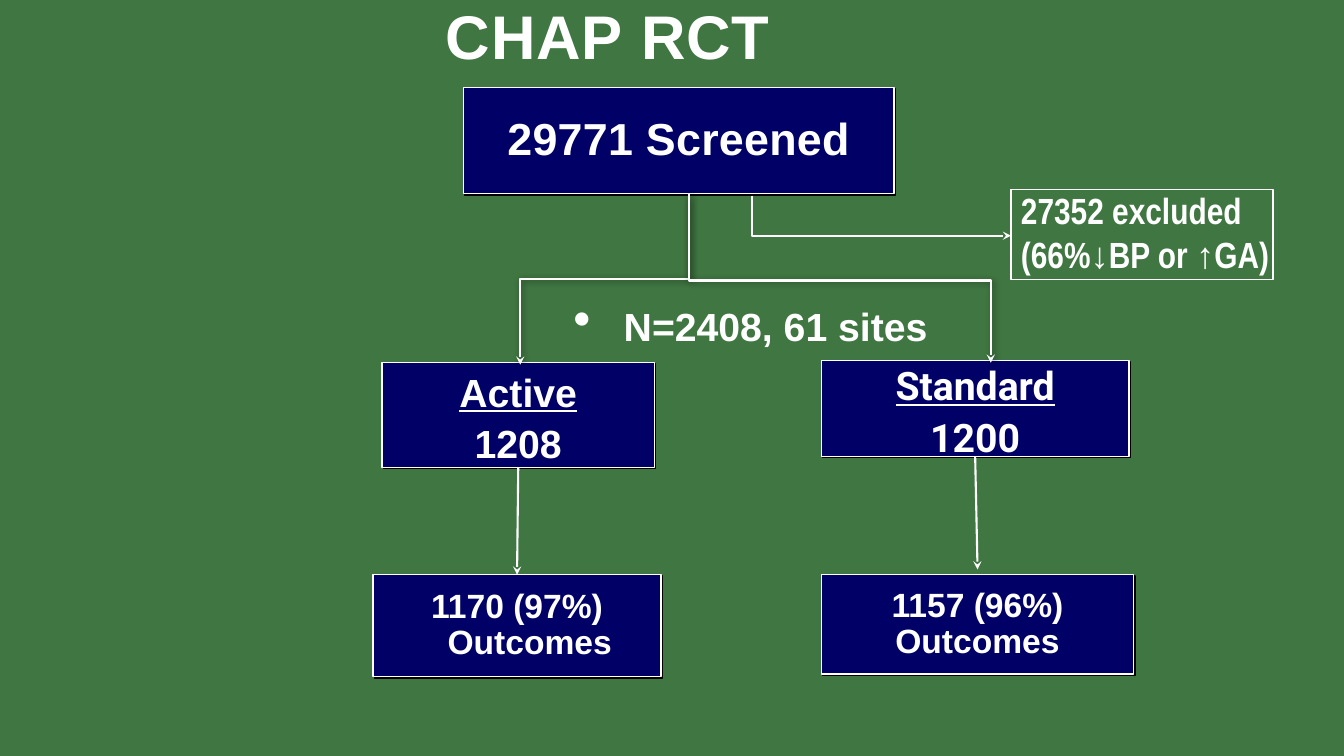
from lxml.etree import SubElement
from pptx import Presentation
from pptx.dml.color import RGBColor
from pptx.enum.dml import MSO_LINE
from pptx.enum.shapes import MSO_CONNECTOR, MSO_SHAPE
from pptx.enum.text import MSO_ANCHOR, PP_ALIGN
from pptx.oxml.ns import qn
from pptx.util import Cm, Pt

GREEN = RGBColor(0x40, 0x76, 0x42)
NAVY = RGBColor(0x00, 0x00, 0x66)
WHITE = RGBColor(0xFF, 0xFF, 0xFF)

MID, LEFT = PP_ALIGN.CENTER, PP_ALIGN.LEFT

BOXES = {
    "screen": dict(at=(11.68, 2.21, 10.85, 2.67), lines=["29771 Screened"],
                   size=32, space=0.9, indent=1.27, track=20),
    "active": dict(at=(9.63, 9.14, 6.86, 2.64), lines=["Active", "1208"],
                   size=28, space=1.1, indent=0.64, under=True),
    "standard": dict(at=(20.7, 9.09, 7.75, 2.41), lines=["Standard", "1200"],
                     size=28, space=1.1, indent=0.64, under=True, face="Roboto"),
    "active end": dict(at=(9.4, 14.48, 7.26, 2.57), lines=["1170 (97%) Outcomes"],
                       size=24, space=0.9, indent=0.64),
    "standard end": dict(at=(20.7, 14.48, 7.87, 2.51), lines=["1157 (96%)", "Outcomes"],
                         size=24, space=0.9, indent=0.64),
}
TEXTS = [
    dict(at=(3.18, -0.18, 24.28, 3.18), lines=["CHAP RCT"], size=44, track=70),
    dict(at=(25.48, 4.62, 7.32, 2.49), lines=["27352 excluded", "(66%↓BP or ↑GA)"],
         size=26, face="Arial Narrow", align=LEFT),
    dict(at=(14.2, 7.49, 10.77, 1.45), lines=["N=2408, 61 sites"],
         size=28, indent=1.27, align=LEFT, bullet="•"),
]
FRAME = (25.48, 4.78, 6.6, 2.26)
ELBOWS = [
    ((17.37, 4.88), (13.11, 9.19), "bentConnector3", True),
    ((17.37, 5.0), (24.97, 9.14), "bentConnector3", True),
    ((18.95, 4.93), (25.48, 5.94), "bentConnector2", False),
]
DROPS = [("active", "active end", True), ("standard", "standard end", False)]
GAP = 0.13


def style(obj, **values):
    for name, value in values.items():
        setattr(obj, name, value)


def shade(shape, alpha=100, blur=0):
    props = shape._element.spPr
    for old in props.findall(qn("a:effectLst")):
        props.remove(old)
    fx = SubElement(props, qn("a:effectLst"))
    if alpha:
        cast = SubElement(fx, qn("a:outerShdw"), blurRad=str(Pt(blur)),
                          dist=str(Pt(1.4)), dir="2700000", algn="ctr", rotWithShape="0")
        color = SubElement(cast, qn("a:srgbClr"), val="000000")
        SubElement(color, qn("a:alpha"), val=str(alpha * 1000))


def write(shape, lines, size, face="Arial", align=MID, space=1.0,
          indent=0, track=0, under=False, bullet=None):
    frame = shape.text_frame
    frame.word_wrap = True
    for num, line in enumerate(lines):
        para = frame.add_paragraph() if num else frame.paragraphs[0]
        props = para._p.get_or_add_pPr()
        if indent:
            props.set("marL", str(Cm(indent)))
            props.set("indent", str(-Cm(indent)))
        if bullet:
            SubElement(props, qn("a:buSzPct"), val="130000")
            SubElement(props, qn("a:buChar"), char=bullet)
        style(para, alignment=align, line_spacing=space)
        run = para.add_run()
        run.text = line
        style(run.font, name=face, size=Pt(size), bold=True,
              underline=under and num == 0)
        run.font.color.rgb = WHITE
        if track:
            run._r.get_or_add_rPr().set("spc", str(track))


def panel(slide, at, fill=None):
    shape = slide.shapes.add_shape(MSO_SHAPE.RECTANGLE, *map(Cm, at))
    shape.shadow.inherit = False
    if fill is None:
        shape.fill.background()
    else:
        shape.fill.solid()
        shape.fill.fore_color.rgb = fill
    shape.line.color.rgb = WHITE
    shape.line.width = Pt(1)
    return shape


def arrow(slide, kind, start, end):
    link = slide.shapes.add_connector(kind, *map(Cm, start + end))
    style(link.line, width=Pt(1.5), dash_style=MSO_LINE.SOLID)
    link.line.color.rgb = WHITE
    SubElement(link.line._get_or_add_ln(), qn("a:tailEnd"), type="stealth")
    shade(link, 0)
    return link


def elbow(slide, start, end, bend, dark):
    (left, top), (right, low) = start, end
    midx, midy = (left + right) / 2, (top + low) / 2
    turn = 1 if right < left else -1
    halfx, halfy = turn * (low - top) / 2, abs(right - left) / 2
    link = arrow(slide, MSO_CONNECTOR.ELBOW,
                 (midx - halfx, midy - halfy), (midx + halfx, midy + halfy))
    props = link._element.spPr
    props.find(qn("a:xfrm")).set("rot", str(turn * 90 % 360 * 60000))
    props.find(qn("a:prstGeom")).set("prst", bend)
    if dark:
        shade(link, 50, 5)


def main():
    deck = Presentation()
    style(deck, slide_width=Cm(33.87), slide_height=Cm(19.05))
    slide = deck.slides.add_slide(deck.slide_layouts[6])
    slide.background.fill.solid()
    slide.background.fill.fore_color.rgb = GREEN

    made = {}
    for name, item in BOXES.items():
        at, words = item["at"], {k: v for k, v in item.items() if k != "at"}
        made[name] = panel(slide, at, NAVY)
        shade(made[name])
        made[name].text_frame.vertical_anchor = MSO_ANCHOR.MIDDLE
        write(made[name], **words)

    for item in ELBOWS:
        elbow(slide, *item)

    for head, foot, joined in DROPS:
        x, y, wide, high = BOXES[head]["at"]
        left, top, span, _ = BOXES[foot]["at"]
        link = arrow(slide, MSO_CONNECTOR.STRAIGHT,
                     (x + wide / 2, y + high), (left + span / 2, top - GAP))
        link.begin_connect(made[head], 2)
        if joined:
            link.end_connect(made[foot], 0)

    panel(slide, FRAME)
    for item in TEXTS:
        at, words = item["at"], {k: v for k, v in item.items() if k != "at"}
        write(slide.shapes.add_textbox(*map(Cm, at)), **words)

    deck.save("out.pptx")


if __name__ == "__main__":
    main()
